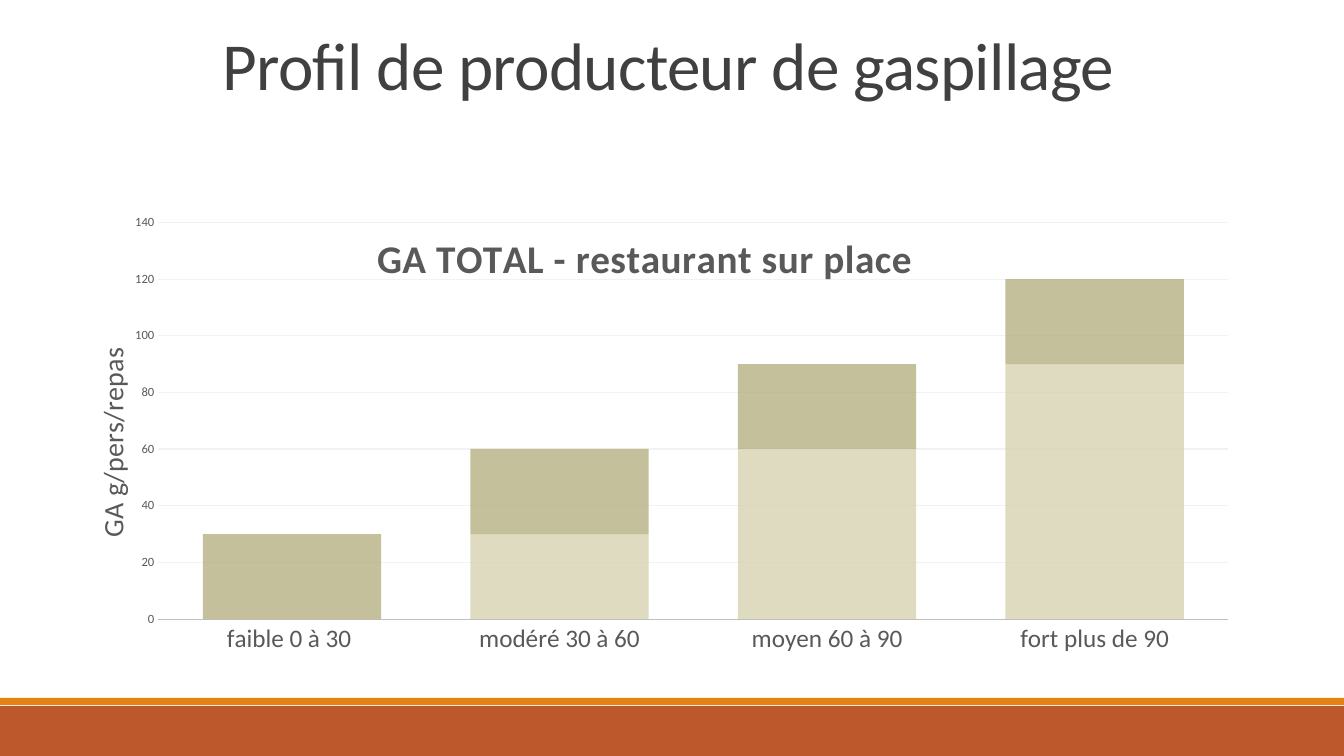
"""Build the slide showing food waste profiles as a stacked column chart."""
from lxml import etree
from pptx import Presentation
from pptx.chart.data import CategoryChartData
from pptx.dml.color import RGBColor
from pptx.enum.chart import XL_CHART_TYPE, XL_TICK_MARK
from pptx.enum.shapes import MSO_SHAPE
from pptx.enum.text import MSO_ANCHOR, MSO_AUTO_SIZE, PP_ALIGN
from pptx.oxml.ns import qn
from pptx.util import Pt

STACKED = XL_CHART_TYPE.COLUMN_STACKED
NO_TICK = XL_TICK_MARK.NONE
RECTANGLE = MSO_SHAPE.RECTANGLE
PX = 914400 / 100.8

THEME = {
    "font": "Calibri",
    "heading": "404040", "label": "595959", "axis": "BFBFBF", "grid": "F2F2F2",
    "strip": "E48312", "footer": "BD582C", "base": "D2CDA8", "range": "ACA671",
    "heading_size": 48, "chart_title_size": 28, "axis_title_size": 20,
    "category_size": 18, "value_size": 9,
}


def style_font(font, size, color, bold=False):
    """Apply the theme font with a size and colour from the theme."""
    font.name = THEME["font"]
    font.size = Pt(THEME[size])
    font.bold = bold
    font.color.rgb = RGBColor.from_string(THEME[color])


def place_in_chart(element, index, **fractions):
    """Give a chart part a manual layout in fractions of the chart."""
    for old_layout in element.findall(qn("c:layout")):
        element.remove(old_layout)
    layout = etree.Element(qn("c:layout"))
    element.insert(index, layout)
    manual = etree.SubElement(layout, qn("c:manualLayout"))
    for tag, value in fractions.items():
        etree.SubElement(manual, qn(f"c:{tag}")).set("val", str(value))


prs = Presentation()
prs.slide_width, prs.slide_height = round(1344 * PX), round(756 * PX)
slide = prs.slides.add_slide(prs.slide_layouts[5])

for color, top, height in (("footer", 706, 50), ("strip", 698, 7)):
    band = slide.shapes.add_shape(
        RECTANGLE, 0, round(top * PX), prs.slide_width, round(height * PX))
    band.shadow.inherit = False
    band.fill.solid()
    band.fill.fore_color.rgb = RGBColor.from_string(THEME[color])
    band.line.fill.background()

heading = slide.shapes.title
heading.left, heading.top, heading.width, heading.height = (
    round(n * PX) for n in (121, 31, 1109, 160))
heading_frame = heading.text_frame
heading_frame.auto_size = MSO_AUTO_SIZE.NONE
heading_frame.vertical_anchor = MSO_ANCHOR.TOP
heading_line = heading_frame.paragraphs[0]
heading_line.alignment = PP_ALIGN.CENTER
heading_line.line_spacing = 0.85
heading_run = heading_line.add_run()
heading_run.text = "Profil de producteur de gaspillage "
style_font(heading_run.font, "heading_size", "heading")
heading_run.font._element.set("spc", "-50")

waste = CategoryChartData()
waste.categories = ["faible 0 à 30 ", "modéré 30 à 60", "moyen 60 à 90", "fort plus de 90"]
waste.add_series("Series 1", (0, 30, 60, 90))
waste.add_series("Series 2", (30, 30, 30, 30))
chart = slide.shapes.add_chart(
    STACKED, *(round(n * PX) for n in (76, 151, 1176, 529)), waste).chart
chart.has_legend = False
chart.font.name = THEME["font"]
chart.font.size = Pt(10)

columns = chart.plots[0]
columns.gap_width = 50
columns.overlap = 100
columns.vary_by_categories = False
for series, color in zip(columns.series, ("base", "range")):
    series.format.fill.solid()
    series.format.fill.fore_color.rgb = RGBColor.from_string(THEME[color])
for series_element in chart.element.iter(qn("c:ser")):
    for fill_color in series_element.iter(qn("a:srgbClr")):
        etree.SubElement(fill_color, qn("a:alpha")).set("val", "70000")

levels, profiles = chart.value_axis, chart.category_axis
for axis, size in ((levels, "value_size"), (profiles, "category_size")):
    axis.major_tick_mark = axis.minor_tick_mark = NO_TICK
    style_font(axis.tick_labels.font, size, "label")
levels.minimum_scale, levels.maximum_scale, levels.major_unit = 0, 140, 20
levels.format.line.fill.background()
levels.has_major_gridlines = True
for line, color in ((levels.major_gridlines.format.line, "grid"),
                    (profiles.format.line, "axis")):
    line.color.rgb = RGBColor.from_string(THEME[color])
    line.width = Pt(0.75)

for caption, text, size, bold, x, y in (
        (chart.chart_title, "GA TOTAL - restaurant sur place",
         "chart_title_size", True, 0.25, 0.14),
        (levels.axis_title, "GA g/pers/repas ", "axis_title_size", False, 0.01, 0.35)):
    caption_run = caption.text_frame.paragraphs[0].add_run()
    caption_run.text = text
    style_font(caption_run.font, size, "label", bold)
    place_in_chart(caption.element, 1, xMode="edge", yMode="edge", x=x, y=y)
    if bold:
        caption_run.font._element.set("spc", "50")
    else:
        caption.element.find(f".//{qn('a:bodyPr')}").set("rot", "-5400000")

place_in_chart(chart.element.find(f".//{qn('c:plotArea')}"), 0, layoutTarget="inner",
               xMode="edge", yMode="edge", x=0.07, y=0.135, w=0.91, h=0.75)

prs.save("out.pptx")
